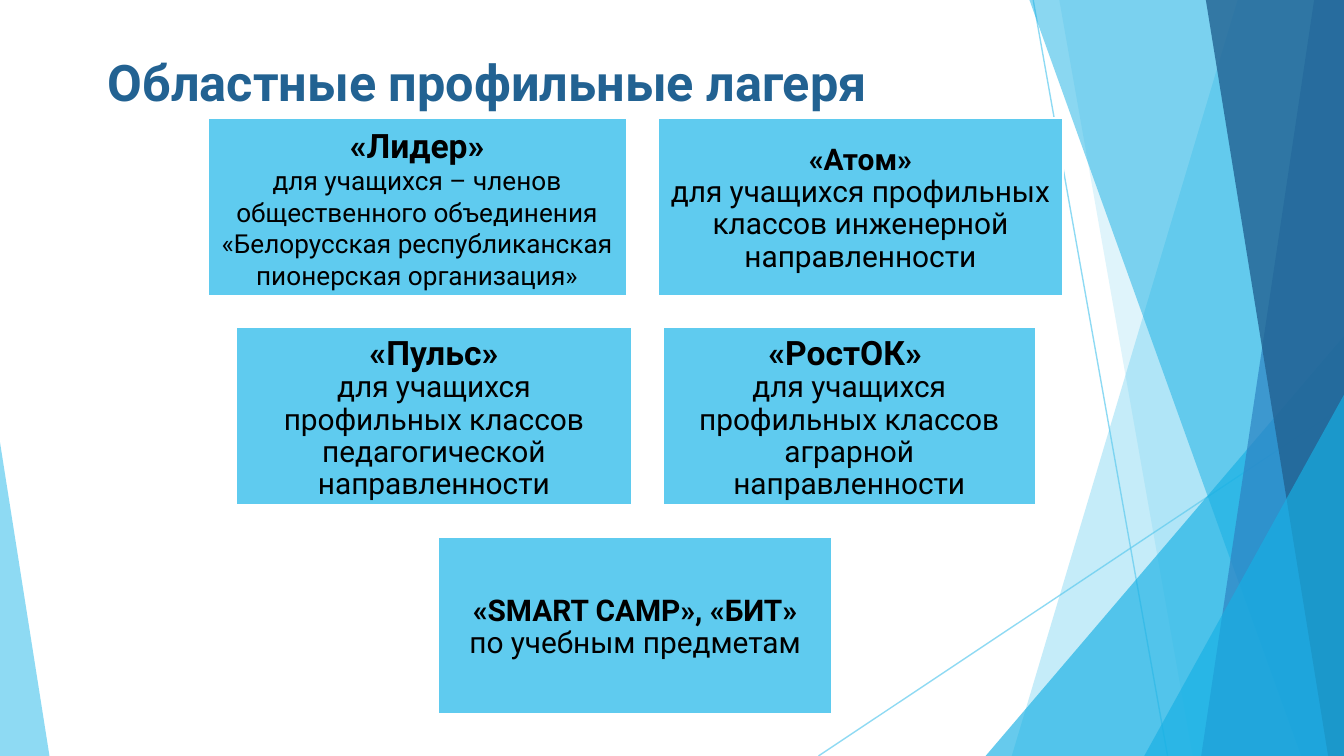
from lxml.etree import SubElement
from pptx import Presentation
from pptx.dml.color import RGBColor
from pptx.enum.shapes import MSO_CONNECTOR, MSO_SHAPE
from pptx.enum.text import MSO_ANCHOR, PP_ALIGN
from pptx.oxml.ns import qn
from pptx.util import Pt

COLORS = {
    "sky": "5FCBEF",
    "cyan": "17B0E4",
    "blue": "2E83C3",
    "navy": "226292",
    "black": "000000",
    "white": "FFFFFF",
}
WIDTH, HEIGHT = 720, 405


def paint(fill, color, opacity=100):
    """Give a fill a solid colour with an opacity in percent."""
    fill.solid()
    fill.fore_color.rgb = RGBColor.from_string(COLORS[color])
    if opacity < 100:
        color_element = fill._xPr.find(".//" + qn("a:srgbClr"))
        SubElement(color_element, qn("a:alpha"), val=str(opacity * 1000))


def add_run(paragraph, text, size, color, bold):
    run = paragraph.add_run()
    run.text = text
    run.font.color.rgb = RGBColor.from_string(COLORS[color])
    for name, value in {"name": "Roboto", "size": Pt(size), "bold": bold}.items():
        setattr(run.font, name, value)


presentation = Presentation()
presentation.slide_width = Pt(WIDTH)
presentation.slide_height = Pt(HEIGHT)
slide = presentation.slides.add_slide(presentation.slide_layouts[5])
shapes = slide.shapes

# Thin crossing lines
for start_x, start_y, end_x, end_y in [(553.5, 0, 625.5, HEIGHT), (WIDTH, 217.5, 438.5, HEIGHT)]:
    line = shapes.add_connector(
        MSO_CONNECTOR.STRAIGHT, Pt(start_x), Pt(start_y), Pt(end_x), Pt(end_y)
    )
    line.line.width = Pt(0.75)
    paint(line.line.fill, "sky", 70)
    SubElement(line._element.spPr, qn("a:effectLst"))

# Bands reach the right edge: (top left x, bottom left x, color, opacity)
# Triangles: (left, top, width, apex position, color, opacity)
facets = [
    (663, 542, "sky", 36),
    (567.5, 639, "sky", 20),
    (528, 180, 192, 1, "cyan", 66),
    (551.5, 697, "cyan", 50),
    (704, 643.5, "blue", 70),
    (646, 711.5, "navy", 80),
    (613, 211.5, 107, 1, "cyan", 66),
    (0, 237, 26.5, 0, "sky", 70),
]
for *geometry, color, opacity in facets:
    if len(geometry) == 2:
        top_x, bottom_x = geometry
        builder = shapes.build_freeform(Pt(top_x), 0)
        corners = [(WIDTH, 0), (WIDTH, HEIGHT), (bottom_x, HEIGHT)]
        builder.add_line_segments([(Pt(x), Pt(y)) for x, y in corners], close=True)
        facet = builder.convert_to_shape()
    else:
        left, top, width, apex = geometry
        facet = shapes.add_shape(
            MSO_SHAPE.ISOSCELES_TRIANGLE, Pt(left), Pt(top), Pt(width), Pt(HEIGHT - top)
        )
        facet.adjustments[0] = apex
    facet.shadow.inherit = False
    facet.line.fill.background()
    paint(facet.fill, color, opacity)

title = shapes.title
title_box = {"left": 50.5, "top": 24, "width": 616, "height": 78}
for name, value in title_box.items():
    setattr(title, name, Pt(value))
title.text_frame.vertical_anchor = MSO_ANCHOR.TOP
title.text_frame.paragraphs[0].alignment = PP_ALIGN.LEFT
add_run(title.text_frame.paragraphs[0], "Областные профильные лагеря", 27, "navy", True)

# Camps by row: (left, width, name, name size, description, description size, line spacing)
camp_rows = [
    [
        (111, 225, "«Лидер»", 18,
         "для учащихся – членов общественного объединения "
         "«Белорусская республиканская пионерская организация»", 14, 1.0),
        (352.5, 217, "«Атом»", 16,
         "для учащихся профильных классов инженерной направленности", 16, 0.9),
    ],
    [
        (126, 213, "«Пульс»", 18,
         "для учащихся профильных классов педагогической направленности", 16, 0.9),
        (355, 200, "«РостОК» ", 18,
         "для учащихся профильных классов аграрной направленности", 16, 0.9),
    ],
    [(234.5, 211.5, "«SMART CAMP», «БИТ»", 16, "по учебным предметам", 16, 0.9)],
]
CAMP_TOP, CAMP_HEIGHT, ROW_STEP = 63.25, 95.75, 112
for row, camps in enumerate(camp_rows):
    for left, width, name, name_size, description, description_size, spacing in camps:
        card = shapes.add_shape(
            MSO_SHAPE.RECTANGLE,
            Pt(left), Pt(CAMP_TOP + row * ROW_STEP), Pt(width), Pt(CAMP_HEIGHT),
        )
        card.shadow.inherit = False
        paint(card.fill, "sky")
        paint(card.line.fill, "white")
        card.line.width = Pt(1.5)

        frame = card.text_frame
        frame.word_wrap = True
        frame.vertical_anchor = MSO_ANCHOR.MIDDLE
        for side in ("left", "top", "right", "bottom"):
            setattr(frame, f"margin_{side}", Pt(5))
        heading, details = frame.paragraphs[0], frame.add_paragraph()
        heading.alignment = details.alignment = PP_ALIGN.CENTER
        details.line_spacing = spacing
        add_run(heading, name, name_size, "black", True)
        add_run(details, description, description_size, "black", False)

presentation.save("out.pptx")
